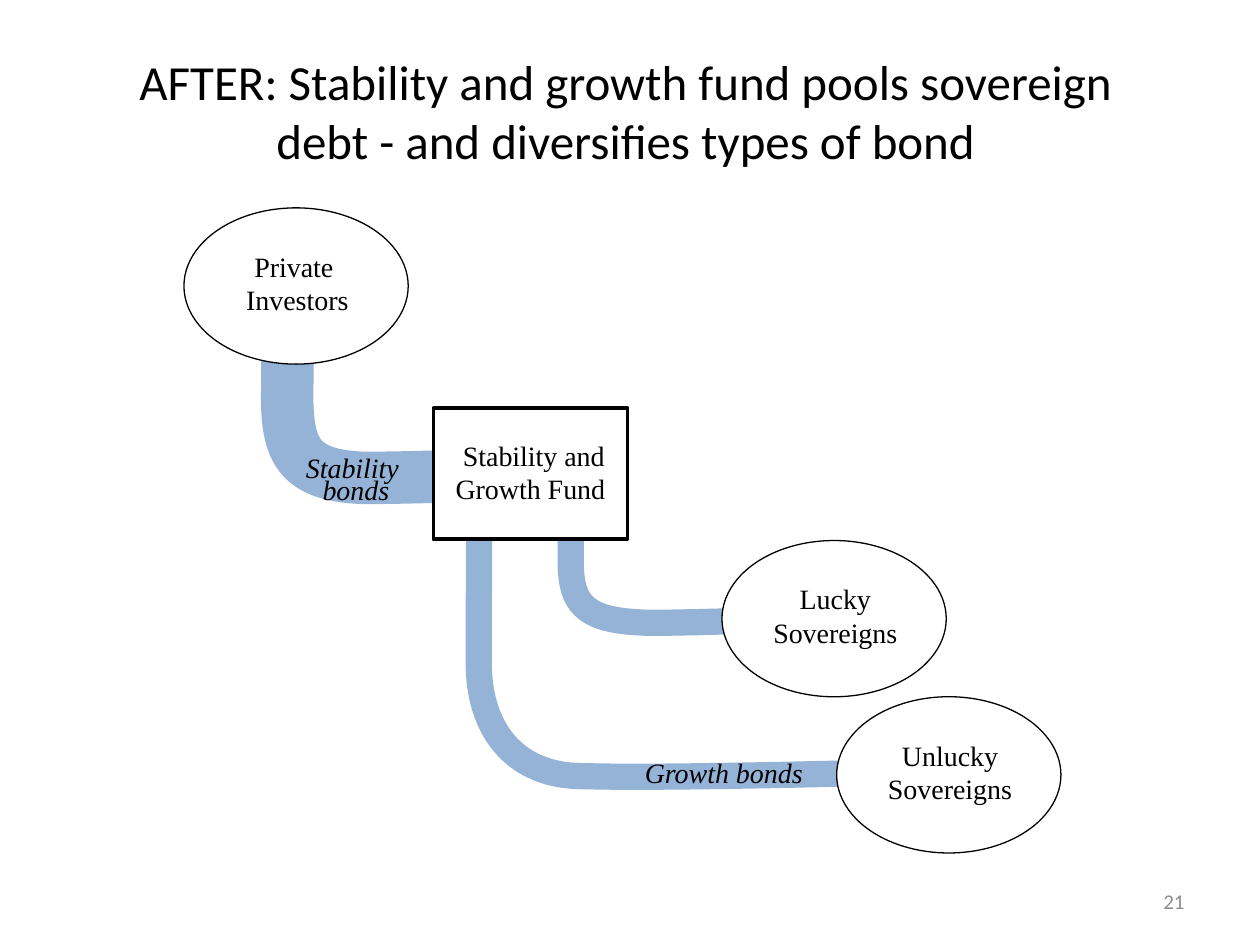
from pptx import Presentation
from pptx.dml.color import RGBColor
from pptx.enum.shapes import MSO_SHAPE as Shape
from pptx.enum.text import MSO_ANCHOR as Anchor, MSO_AUTO_SIZE as AutoSize, PP_ALIGN as Align
from pptx.oxml.ns import qn
from pptx.util import Inches, Pt
from lxml.etree import SubElement

BLACK = RGBColor(0, 0, 0)
WHITE = RGBColor(255, 255, 255)
GREY = RGBColor(0x8C, 0x8C, 0x8C)
FLOW_BLUE = RGBColor(0x95, 0xB3, 0xD7)
SERIF, SANS = "Times New Roman", "Calibri"

TITLE = ("AFTER: Stability and growth fund pools sovereign debt"
         " - and diversifies types of bond")

# Flows: line width in points, start point, then two control points
# and an end point for each Bézier segment
FLOWS = [
    (15, [(4.54, 4.03),
          (4.53, 4.03), (4.53, 4.48), (4.53, 4.49),
          (4.54, 4.77), (4.62, 4.92), (5.08, 4.94),
          (5.16, 4.95), (5.83, 4.93), (5.82, 4.93)]),
    (15, [(3.81, 4.03),
          (3.8, 4.03), (3.8, 4.92), (3.8, 5.3),
          (3.81, 5.75), (4.05, 6.17), (4.65, 6.16),
          (5.26, 6.18), (7.05, 6.13), (7.04, 6.13)]),
    (30, [(2.29, 2.59),
          (2.28, 2.59), (2.28, 3.18), (2.28, 3.2),
          (2.29, 3.56), (2.37, 3.76), (2.83, 3.79),
          (2.9, 3.8), (3.58, 3.78), (3.57, 3.78)]),
]
# Bond labels: text, box, line spacing
BONDS = [
    ("Growth bonds", (4.88, 5.95, 1.73, 0.56), None),
    ("Stability \vbonds", (2.06, 3.61, 1.53, 0.83), Pt(13)),
]
# Parties: text, left and top of the ellipse
PARTIES = [
    ("Lucky\vSovereigns", 5.73, 4.29),
    ("Unlucky\vSovereigns", 6.64, 5.53),
    ("Private \vInvestors", 1.46, 1.65),
]
PARTY_SIZE = (1.78, 1.24)
PARTY_LABEL_SIZE = (1.24, 0.66)
PARTY_LABEL_OFFSET = 0.28
FUND_BOX = (3.44, 3.24, 1.54, 1.04)
FUND_LABEL_BOX = (3.41, 3.43, 1.6, 0.7)


def inches(lengths):
    return [Inches(length) for length in lengths]


def style_font(font, name, size, color=BLACK, italic=False):
    font.name, font.size, font.italic = name, Pt(size), italic
    font.color.rgb = color


def bend(outline):
    """Turn each three straight segments into one cubic Bézier segment."""
    lines = list(outline.element.iter(qn("a:lnTo")))
    for first in range(0, len(lines), 3):
        segment = lines[first:first + 3]
        curve = SubElement(segment[0].getparent(), qn("a:cubicBezTo"))
        for line in segment:
            curve.append(line[0])
            line.getparent().remove(line)


def add_flow(slide, width, points):
    start, *rest = [inches(point) for point in points]
    builder = slide.shapes.build_freeform(*start)
    builder.add_line_segments(rest, close=False)
    flow = builder.convert_to_shape()
    bend(flow)
    flow.shadow.inherit = False
    flow.fill.background()
    flow.line.color.rgb = FLOW_BLUE
    flow.line.width = Pt(width)


def add_node(slide, kind, box, line_width):
    node = slide.shapes.add_shape(kind, *inches(box))
    node.shadow.inherit = False
    node.fill.solid()
    node.fill.fore_color.rgb = WHITE
    node.line.color.rgb = BLACK
    node.line.width = Pt(line_width)


def add_label(slide, text, box, name=SERIF, size=16, color=BLACK, italic=False,
              align=Align.CENTER, anchor=Anchor.TOP, spacing=None):
    frame = slide.shapes.add_textbox(*inches(box)).text_frame
    frame.word_wrap = True
    frame.vertical_anchor = anchor
    paragraph = frame.paragraphs[0]
    paragraph.text = text
    paragraph.alignment = align
    paragraph.line_spacing = spacing
    style_font(paragraph.font, name, size, color, italic)


def main():
    prs = Presentation()
    prs.slide_width, prs.slide_height = Inches(10), Inches(7.5)
    slide = prs.slides.add_slide(prs.slide_layouts[5])

    title = slide.shapes.title
    title.left, title.top, title.width, title.height = inches((0.91, 0.36, 8.11, 1.04))
    frame = title.text_frame
    frame.text = TITLE
    frame.auto_size = AutoSize.NONE
    frame.vertical_anchor = Anchor.TOP
    frame.paragraphs[0].alignment = Align.CENTER
    style_font(frame.paragraphs[0].font, SANS, 28)

    for flow in FLOWS:
        add_flow(slide, *flow)
    for text, box, spacing in BONDS:
        add_label(slide, text, box, italic=True, spacing=spacing)
    for text, left, top in PARTIES:
        add_node(slide, Shape.OVAL, (left, top, *PARTY_SIZE), 0.75)
        add_label(slide, text, (left + PARTY_LABEL_OFFSET, top + PARTY_LABEL_OFFSET,
                                *PARTY_LABEL_SIZE))
    add_node(slide, Shape.RECTANGLE, FUND_BOX, 2)
    add_label(slide, " Stability and Growth Fund", FUND_LABEL_BOX)
    add_label(slide, "21", (7.17, 6.95, 2.33, 0.4), SANS, 12, GREY,
              align=Align.RIGHT, anchor=Anchor.MIDDLE)

    prs.save("out.pptx")


if __name__ == "__main__":
    main()
